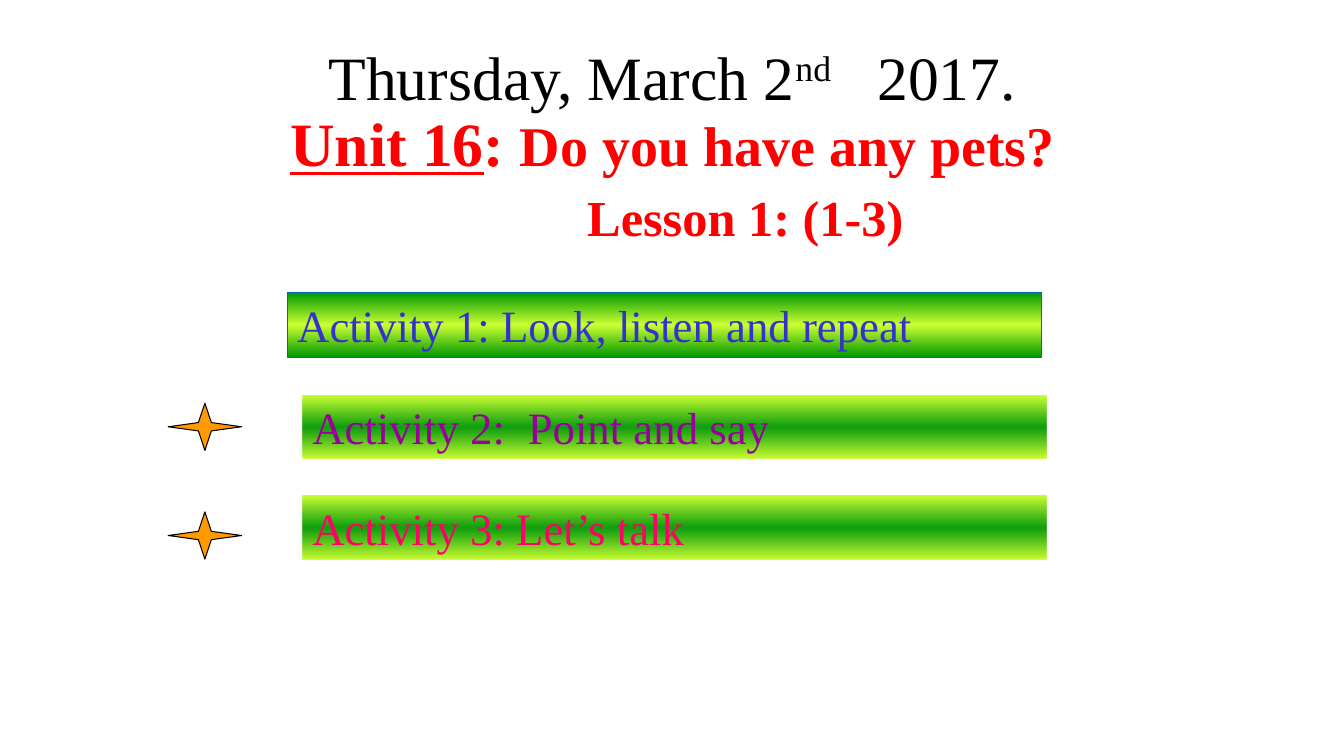
from copy import deepcopy
from lxml import etree
from pptx import Presentation
from pptx.dml.color import RGBColor
from pptx.enum import shapes, text
from pptx.oxml.ns import qn
from pptx.util import Cm, Pt

BLACK = RGBColor(0x00, 0x00, 0x00)
RED = RGBColor(0xFF, 0x00, 0x00)
ORANGE = RGBColor(0xFF, 0x99, 0x00)
GREEN = RGBColor(0x00, 0x99, 0x00)
LIME = RGBColor(0xCC, 0xFF, 0x33)
BORDER_BLUE = RGBColor(0x05, 0x63, 0xC1)
BLUE = RGBColor(0x33, 0x33, 0xCC)
PURPLE = RGBColor(0x99, 0x00, 0x99)
PINK = RGBColor(0xFF, 0x00, 0x66)


def add_span(para, words, color, size, tracking=0, baseline=0, **style):
    """Add a run; tracking is in points, baseline in percent."""
    span = para.add_run()
    span.text = words
    span.font.color.rgb = color
    for name, value in {"name": "Times New Roman", "size": Pt(size), **style}.items():
        setattr(span.font, name, value)
    properties = span.font._element
    if tracking:
        properties.set("spc", str(tracking * 100))
    if baseline:
        properties.set("baseline", str(baseline * 1000))


def fill_bands(bar, edge, middle, opacity):
    """Fill with a vertical gradient: edge, middle, edge."""
    bar.fill.gradient()
    bar.fill.gradient_angle = 270
    stop_list = bar._element.spPr.find(qn("a:gradFill")).find(qn("a:gsLst"))
    stop_list.append(deepcopy(stop_list[0]))
    for stop, position, color in zip(bar.fill.gradient_stops, (0, 0.5, 1), (edge, middle, edge)):
        stop.position = position
        stop.color.rgb = color
    if opacity < 100:
        alpha = etree.SubElement(stop_list[1][0], qn("a:alpha"))
        alpha.set("val", str(opacity * 1000))


deck = Presentation()
deck.slide_width, deck.slide_height = Cm(33.87), Cm(19.05)
page = deck.slides.add_slide(deck.slide_layouts[6])

# Heading
heading = page.shapes.add_textbox(Cm(2.34), Cm(1.02), Cm(29.21), Cm(3.68))
heading.text_frame.word_wrap = True
heading.text_frame.vertical_anchor = text.MSO_ANCHOR.MIDDLE
para = heading.text_frame.paragraphs[0]
para.alignment = text.PP_ALIGN.CENTER
para.line_spacing = 0.9
add_span(para, "Thursday, March 2", BLACK, 44)
add_span(para, "nd", BLACK, 44, baseline=30)
add_span(para, " ", BLACK, 44, tracking=22)
add_span(para, "2017.", BLACK, 44)
para.add_line_break()
add_span(para, "Unit 16", RED, 44, bold=True, underline=True)
add_span(para, ": ", RED, 44, bold=True)
add_span(para, "Do you have any pets?", RED, 40, bold=True)

lesson = page.shapes.add_textbox(Cm(14.55), Cm(4.57), Cm(8.56), Cm(1.8))
lesson.text_frame.word_wrap = False
add_span(lesson.text_frame.paragraphs[0], "Lesson 1: (1-3)", RED, 36, bold=True)

# Stars beside the last two activities
for top in (10.16, 12.9):
    star = page.shapes.add_shape(shapes.MSO_SHAPE.STAR_4_POINT, Cm(4.24), Cm(top), Cm(1.85), Cm(1.19))
    star.shadow.inherit = False
    star.adjustments[0] = 0.125
    star.fill.solid()
    star.fill.fore_color.rgb = ORANGE
    star.line.color.rgb = BLACK
    star.line.width = Pt(0.75)

# Activity bars: label, title, gap tracking, text colour, box, edge, middle, opacity, border
activities = [
    ("Activity 1:", "Look, listen and repeat", 0, BLUE, (7.24, 7.37, 19.02, 1.63), GREEN, LIME, 100, BORDER_BLUE),
    ("Activity 2:", "Point and say", 8, PURPLE, (7.62, 9.96, 18.75, 1.6), LIME, GREEN, 94, None),
    ("Activity 3:", "Let’s talk", 0, PINK, (7.62, 12.5, 18.75, 1.6), LIME, GREEN, 94, None),
]
for label, title, gap, color, box, edge, middle, opacity, border in activities:
    bar = page.shapes.add_shape(shapes.MSO_SHAPE.RECTANGLE, *map(Cm, box))
    bar.shadow.inherit = False
    fill_bands(bar, edge, middle, opacity)
    if border:
        bar.line.color.rgb = border
        bar.line.width = Pt(0.75)
    else:
        bar.line.fill.background()
    bar.text_frame.word_wrap = True
    bar.text_frame.vertical_anchor = text.MSO_ANCHOR.TOP
    para = bar.text_frame.paragraphs[0]
    para.alignment = text.PP_ALIGN.LEFT
    add_span(para, label, color, 32)
    add_span(para, " ", color, 32, tracking=gap)
    add_span(para, title, color, 32)

deck.save("out.pptx")
